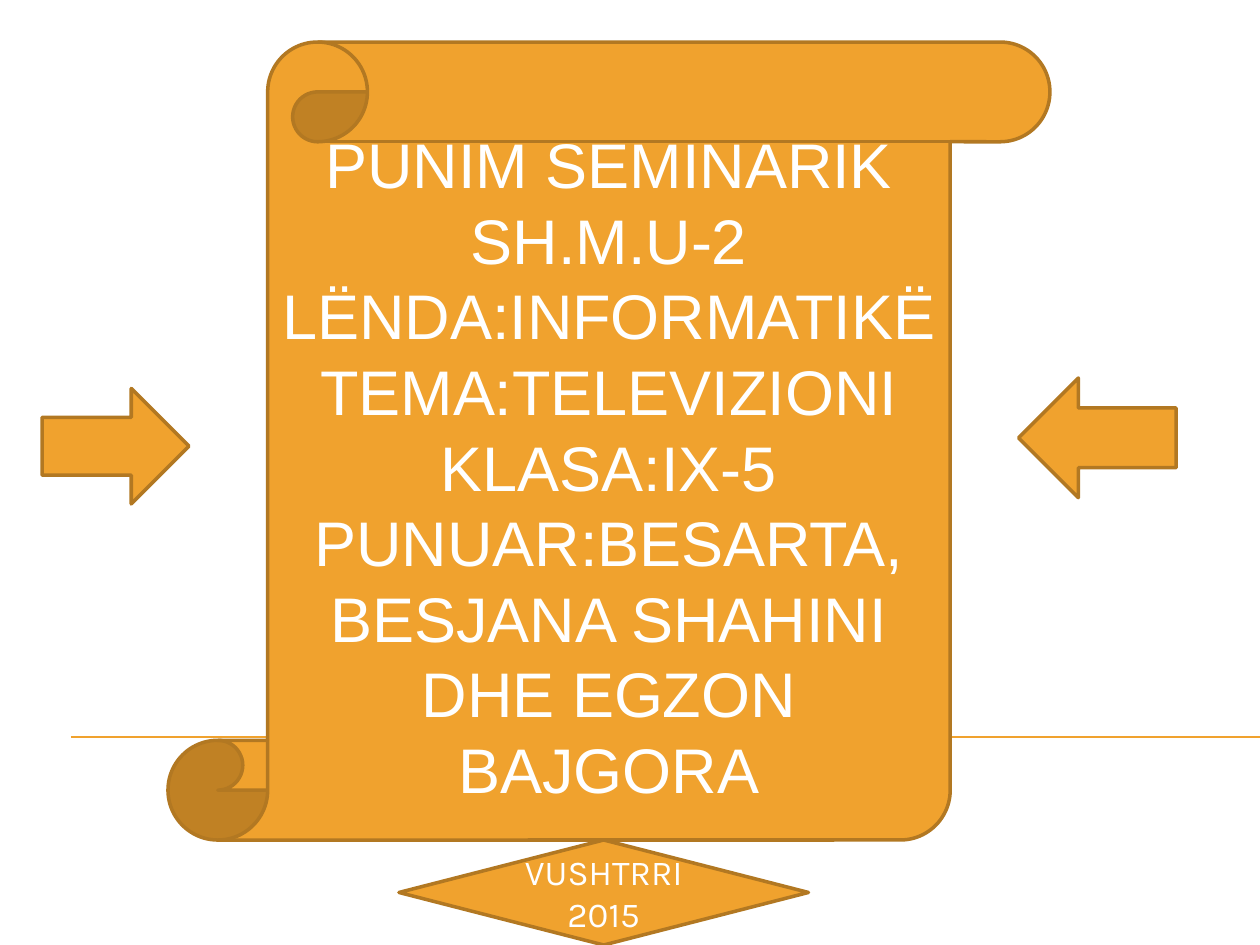
from lxml.etree import SubElement
from pptx import Presentation
from pptx.dml.color import RGBColor
from pptx.enum.shapes import MSO_CONNECTOR, MSO_SHAPE
from pptx.enum.text import MSO_ANCHOR, PP_ALIGN
from pptx.oxml.ns import qn
from pptx.util import Inches, Pt

COLUMNS, ROWS = 120, 90


def color(hex_string):
    return RGBColor.from_string(hex_string)


class SlideBuilder:
    """Holds the style and the current slide, measured on a 120 by 90 grid."""

    fill, outline, text_color = "F0A22E", "B27822", "FFFFFF"

    def __init__(self, presentation):
        self.column = presentation.slide_width / COLUMNS
        self.row = presentation.slide_height / ROWS
        self.slide = presentation.slides.add_slide(presentation.slide_layouts[6])

    def place(self, column, row):
        return round(column * self.column), round(row * self.row)

    def rule(self, start, end):
        connector = self.slide.shapes.add_connector(
            MSO_CONNECTOR.STRAIGHT, *self.place(*start), *self.place(*end))
        connector.line.color.rgb = color(self.fill)
        connector.line.width = Pt(0.75)
        SubElement(connector.element.spPr, qn("a:effectLst"))

    def shape(self, kind, position, size):
        shape = self.slide.shapes.add_shape(
            kind, *self.place(*position), *self.place(*size))
        shape.shadow.inherit = False
        shape.fill.solid()
        shape.fill.fore_color.rgb = color(self.fill)
        shape.line.color.rgb = color(self.outline)
        shape.line.width = Pt(2)
        return shape

    def labelled_shape(self, kind, position, size, text, font_name, font_size):
        text_frame = self.shape(kind, position, size).text_frame
        text_frame.text = text
        text_frame.word_wrap = True
        text_frame.vertical_anchor = MSO_ANCHOR.MIDDLE
        for paragraph in text_frame.paragraphs:
            paragraph.alignment = PP_ALIGN.CENTER
            for run in paragraph.runs:
                run.font.name = font_name
                run.font.size = Pt(font_size)
                run.font.color.rgb = color(self.text_color)


def main():
    presentation = Presentation()
    presentation.slide_width, presentation.slide_height = Inches(10), Inches(7.5)
    builder = SlideBuilder(presentation)

    credits = "\v".join([
        "PUNIM SEMINARIK SH.M.U-2",
        "LËNDA:INFORMATIKË",
        "TEMA:TELEVIZIONI",
        "KLASA:IX-5",
        "PUNUAR:BESARTA,",
    ]) + "\nBESJANA SHAHINI DHE EGZON BAJGORA"

    builder.rule((6.75, 70.2), (COLUMNS, 70.2))
    builder.labelled_shape(
        MSO_SHAPE.VERTICAL_SCROLL, (16, 4), (84, 76), credits, "Arial", 36)
    builder.shape(MSO_SHAPE.RIGHT_ARROW, (4, 37), (14, 11))
    builder.shape(MSO_SHAPE.LEFT_ARROW, (97, 36), (15, 11.4))
    builder.labelled_shape(
        MSO_SHAPE.FLOWCHART_DECISION, (38, 80), (39, 10), "VUSHTRRI 2015", "Karla", 20)

    presentation.save("out.pptx")


if __name__ == "__main__":
    main()
